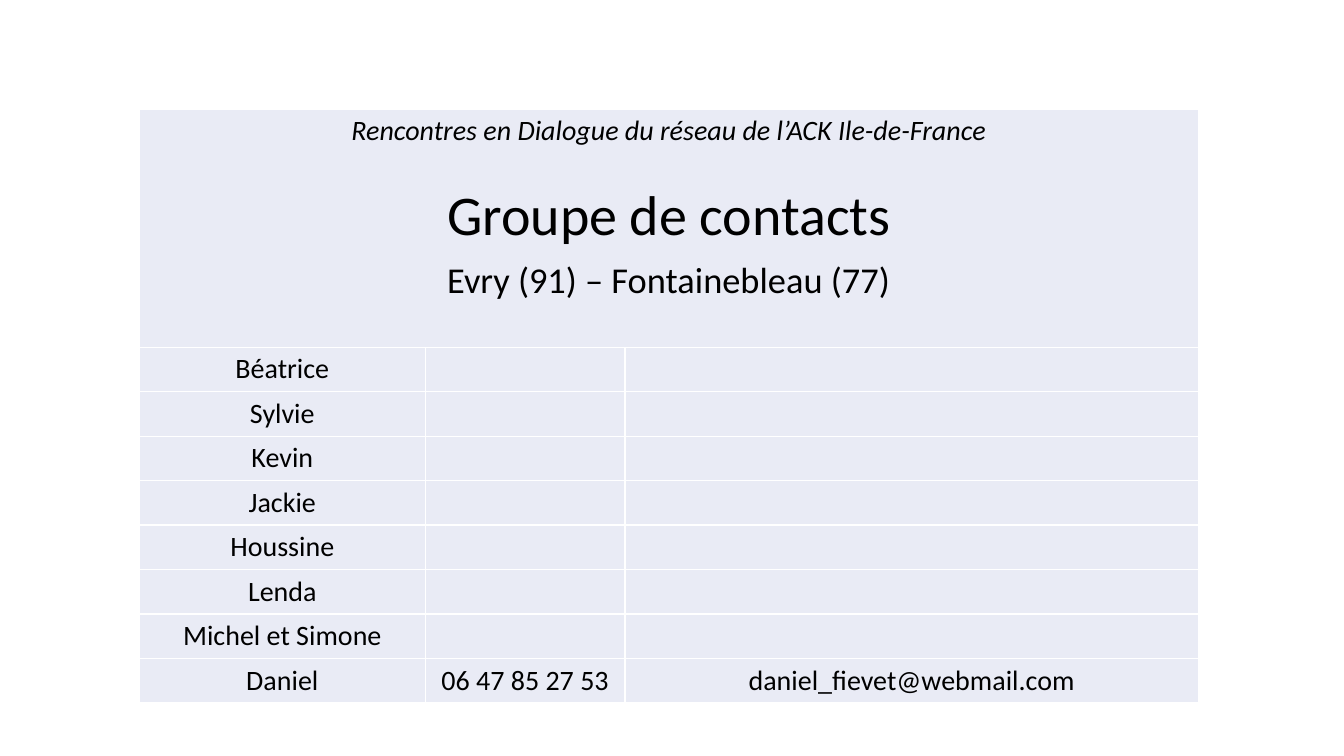
from lxml import etree
from pptx import Presentation
from pptx import util as u
from pptx.dml.color import RGBColor
from pptx.enum import text
from pptx.oxml import ns

COLORS = {"text": "000000", "cell": "E9EBF5", "border": "FFFFFF"}
FONT = "Calibri"
COLUMN_WIDTHS = [7.21, 5.03, 14.45]
HEADER_HEIGHT, ROW_HEIGHT = 6, 1.12

# Text, size, italic, space before (points)
HEADING = [
    ("Rencontres en Dialogue du réseau de l’ACK Ile-de-France", 20, True, 0),
    ("Groupe de contacts", 40, False, 24.4),
    ("Evry (91) – Fontainebleau (77)", 26, False, 5.7),
]
CONTACTS = [
    ("Béatrice", "", ""),
    ("Sylvie", "", ""),
    ("Kevin", "", ""),
    ("Jackie", "", ""),
    ("Houssine", "", ""),
    ("Lenda", "", ""),
    ("Michel et Simone", "", ""),
    ("Daniel", "06 47 85 27 53", "daniel_fievet@webmail.com"),
]


def write_paragraph(paragraph, content, size=20, italic=False, space_before=0):
    paragraph.text = content
    paragraph.alignment = text.PP_ALIGN.CENTER
    paragraph.space_before = u.Pt(space_before)
    font = paragraph.font
    font.name, font.size = FONT, u.Pt(size)
    font.bold, font.italic = False, italic
    font.color.rgb = RGBColor.from_string(COLORS["text"])


def style_cell(cell):
    """Give the cell its fill, narrow side margins and thin borders."""
    cell.margin_left = cell.margin_right = u.Cm(0.03)
    cell.fill.solid()
    cell.fill.fore_color.rgb = RGBColor.from_string(COLORS["cell"])
    properties = cell._tc.get_or_add_tcPr()
    for position, side in enumerate(("lnL", "lnR", "lnT", "lnB")):
        line = etree.Element(ns.qn(f"a:{side}"), w=str(u.Pt(0.96)))
        fill = etree.SubElement(line, ns.qn("a:solidFill"))
        etree.SubElement(fill, ns.qn("a:srgbClr"), val=COLORS["border"])
        properties.insert(position, line)


def add_contact_table(slide):
    height = HEADER_HEIGHT + ROW_HEIGHT * len(CONTACTS)
    table = slide.shapes.add_table(
        len(CONTACTS) + 1, len(COLUMN_WIDTHS),
        u.Cm(3.51), u.Cm(2.75), u.Cm(sum(COLUMN_WIDTHS)), u.Cm(height),
    ).table
    table.first_row = table.horz_banding = False
    for column, width in zip(table.columns, COLUMN_WIDTHS):
        column.width = u.Cm(width)
    for index, row in enumerate(table.rows):
        row.height = u.Cm(ROW_HEIGHT if index else HEADER_HEIGHT)
    for cell in table.iter_cells():
        style_cell(cell)

    header = table.cell(0, 0)
    header.merge(table.cell(0, len(COLUMN_WIDTHS) - 1))
    frame = header.text_frame
    for index, line in enumerate(HEADING):
        paragraph = frame.add_paragraph() if index else frame.paragraphs[0]
        write_paragraph(paragraph, *line)

    for row, contact in enumerate(CONTACTS, start=1):
        for column, content in enumerate(contact):
            cell = table.cell(row, column)
            write_paragraph(cell.text_frame.paragraphs[0], content)


def main():
    presentation = Presentation()
    presentation.slide_width = u.Cm(33.87)
    presentation.slide_height = u.Cm(19.05)
    slide = presentation.slides.add_slide(presentation.slide_layouts[6])
    add_contact_table(slide)
    presentation.save("out.pptx")


if __name__ == "__main__":
    main()
